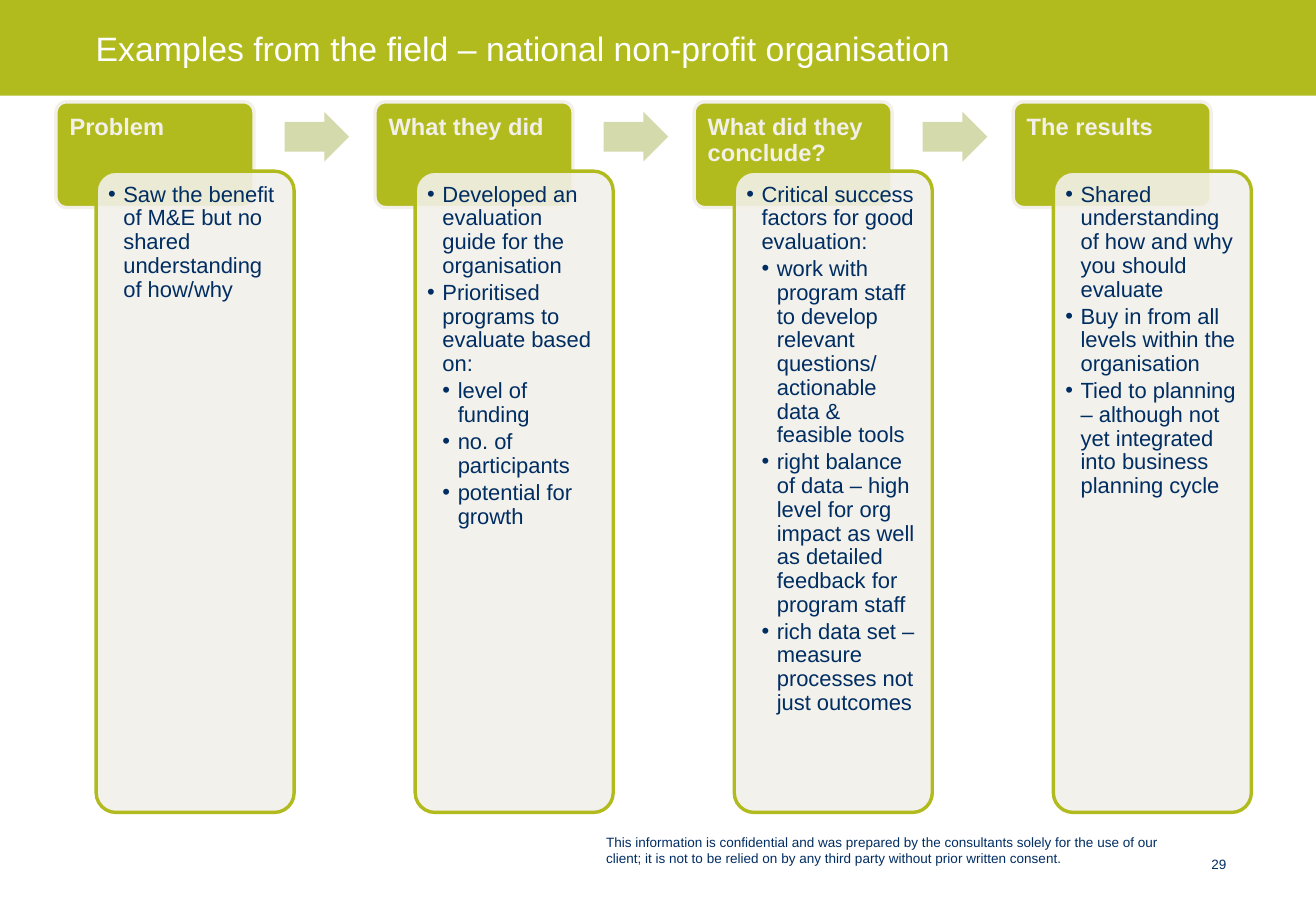
from dataclasses import dataclass

from lxml import etree
from pptx import Presentation
from pptx.dml.color import RGBColor
from pptx.enum.shapes import MSO_SHAPE
from pptx.enum.text import MSO_ANCHOR, PP_ALIGN
from pptx.oxml.ns import qn
from pptx.util import Cm, Pt

RECTANGLE = MSO_SHAPE.RECTANGLE
ROUNDED = MSO_SHAPE.ROUNDED_RECTANGLE
ARROW = MSO_SHAPE.RIGHT_ARROW
TOP, MIDDLE, BOTTOM = MSO_ANCHOR.TOP, MSO_ANCHOR.MIDDLE, MSO_ANCHOR.BOTTOM
LEFT, RIGHT = PP_ALIGN.LEFT, PP_ALIGN.RIGHT


@dataclass(frozen=True)
class Theme:
    """Colours, font and type sizes of the slide."""

    green: RGBColor = RGBColor(0xB2, 0xBB, 0x1E)
    pale_green: RGBColor = RGBColor(0xD5, 0xDA, 0xAC)
    cream: RGBColor = RGBColor(0xF2, 0xF0, 0xE9)
    navy: RGBColor = RGBColor(0x00, 0x2D, 0x62)
    white: RGBColor = RGBColor(0xFF, 0xFF, 0xFF)
    font: str = "Arial"
    title: Pt = Pt(20)
    heading: Pt = Pt(14)
    body: Pt = Pt(13)
    footer: Pt = Pt(8)


THEME = Theme()
TITLE = "Examples from the field – national non-profit organisation"
FOOTER = (
    "This information is confidential and was prepared by the consultants solely for the use "
    "of our client; it is not to be relied on by any third party without prior written consent."
)
PAGE_NUMBER = "29"
STAGES = [
    ("Problem", [
        (0, "Saw the benefit of M&E but no shared understanding of how/why"),
    ]),
    ("What they did", [
        (0, "Developed an evaluation guide for the organisation"),
        (0, "Prioritised programs to evaluate based on:"),
        (1, "level of funding"),
        (1, "no. of participants"),
        (1, "potential for growth"),
    ]),
    ("What did they conclude?", [
        (0, "Critical success factors for good evaluation:"),
        (1, "work with program staff to develop relevant questions/ actionable data "
            "& feasible tools"),
        (1, "right balance of data – high level for org impact as well as detailed "
            "feedback for program staff"),
        (1, "rich data set – measure processes not just outcomes"),
    ]),
    ("The results", [
        (0, "Shared understanding of how and why you should evaluate"),
        (0, "Buy in from all levels within the organisation"),
        (0, "Tied to planning – although not yet integrated into business planning cycle"),
    ]),
]
FIRST_LEFT, STAGE_PITCH = 1.17, 6.67
CARD_WIDTH, PANEL_SHIFT, ARROW_SHIFT = 4.14, 0.84, 4.78
BULLET_INDENT = 0.32


def apply_format(target, **values):
    """Set each named attribute of the target."""
    for name, value in values.items():
        setattr(target, name, value)


def set_frame(shape, anchor, left=0, top=0, right=0, bottom=0):
    """Set wrapping, anchor and margins in centimetres, and return the text frame."""
    frame = shape.text_frame
    apply_format(frame, word_wrap=True, vertical_anchor=anchor,
                 margin_left=Cm(left), margin_top=Cm(top),
                 margin_right=Cm(right), margin_bottom=Cm(bottom))
    return frame


def write(paragraph, text, size, colour, bold=False, **layout):
    """Write one formatted run into a paragraph."""
    apply_format(paragraph, **{"alignment": LEFT, **layout})
    run = paragraph.add_run()
    run.text = text
    apply_format(run.font, name=THEME.font, size=size, bold=bold)
    run.font.color.rgb = colour


def add_bullet(paragraph, level):
    """Give a paragraph a hanging bullet at its level."""
    properties = paragraph._p.get_or_add_pPr()
    properties.set("marL", str(Cm(BULLET_INDENT * (level + 1))))
    properties.set("indent", str(-Cm(BULLET_INDENT)))
    etree.SubElement(properties, qn("a:buFont")).set("typeface", THEME.font)
    etree.SubElement(properties, qn("a:buChar")).set("char", "•")


def add_block(slide, kind, box, fill, line=None, adjustments=()):
    """Add a filled preset shape with an optional outline."""
    shape = slide.shapes.add_shape(kind, *map(Cm, box))
    shape.shadow.inherit = False
    shape.fill.solid()
    shape.fill.fore_color.rgb = fill
    if line is None:
        shape.line.fill.background()
    else:
        shape.line.color.rgb = line
        shape.line.width = Pt(2)
    for index, value in enumerate(adjustments):
        shape.adjustments[index] = value
    return shape


def add_banner(slide, width):
    """Add the title band across the top."""
    banner = add_block(slide, RECTANGLE, (0, 0, width, 2), THEME.green)
    frame = set_frame(banner, MIDDLE, left=2)
    write(frame.paragraphs[0], TITLE, THEME.title, THEME.white)


def add_heading(slide, left, text):
    """Add the green card that names a stage."""
    card = add_block(slide, ROUNDED, (left, 2.13, CARD_WIDTH, 2.21),
                     THEME.green, THEME.cream, [0.1])
    frame = set_frame(card, TOP, 0.22, 0.22, 0.22, 0.15)
    write(frame.paragraphs[0], text, THEME.heading, THEME.cream, bold=True, line_spacing=0.9)


def add_panel(slide, left, points):
    """Add the translucent panel with the bullet points of a stage."""
    panel = add_block(slide, ROUNDED, (left, 3.58, CARD_WIDTH, 13.41),
                      THEME.cream, THEME.green, [0.1])
    colour = panel.fill._xPr.find(qn("a:solidFill"))[0]
    etree.SubElement(colour, qn("a:alpha")).set("val", "90000")
    frame = set_frame(panel, TOP, 0.13, 0.13, 0.13, 0.13)
    for index, (level, text) in enumerate(points):
        paragraph = frame.add_paragraph() if index else frame.paragraphs[0]
        add_bullet(paragraph, level)
        write(paragraph, text, THEME.body, THEME.navy,
              level=level, line_spacing=0.9, space_after=Pt(2))


def add_footer_text(slide, box, text, alignment, right=0):
    """Add a small text box that sits on its bottom edge."""
    frame = set_frame(slide.shapes.add_textbox(*map(Cm, box)), BOTTOM, right=right)
    write(frame.paragraphs[0], text, THEME.footer, THEME.navy, alignment=alignment)


def main():
    """Build the slide and save it."""
    width = 27.51
    presentation = Presentation()
    apply_format(presentation, slide_width=Cm(width), slide_height=Cm(19.05))
    slide = presentation.slides.add_slide(presentation.slide_layouts[6])
    add_banner(slide, width)
    for index, (heading, points) in enumerate(STAGES):
        left = FIRST_LEFT + index * STAGE_PITCH
        add_heading(slide, left, heading)
        add_panel(slide, left + PANEL_SHIFT, points)
        if index < len(STAGES) - 1:
            add_block(slide, ARROW, (left + ARROW_SHIFT, 2.34, 1.35, 1.04),
                      THEME.pale_green, adjustments=[0.6, 0.5])
    add_footer_text(slide, (12.67, 17.42, 11.91, 0.69), FOOTER, LEFT)
    add_footer_text(slide, (24.77, 16.92, 1.12, 1.32), PAGE_NUMBER, RIGHT, right=0.25)
    presentation.save("out.pptx")


if __name__ == "__main__":
    main()
